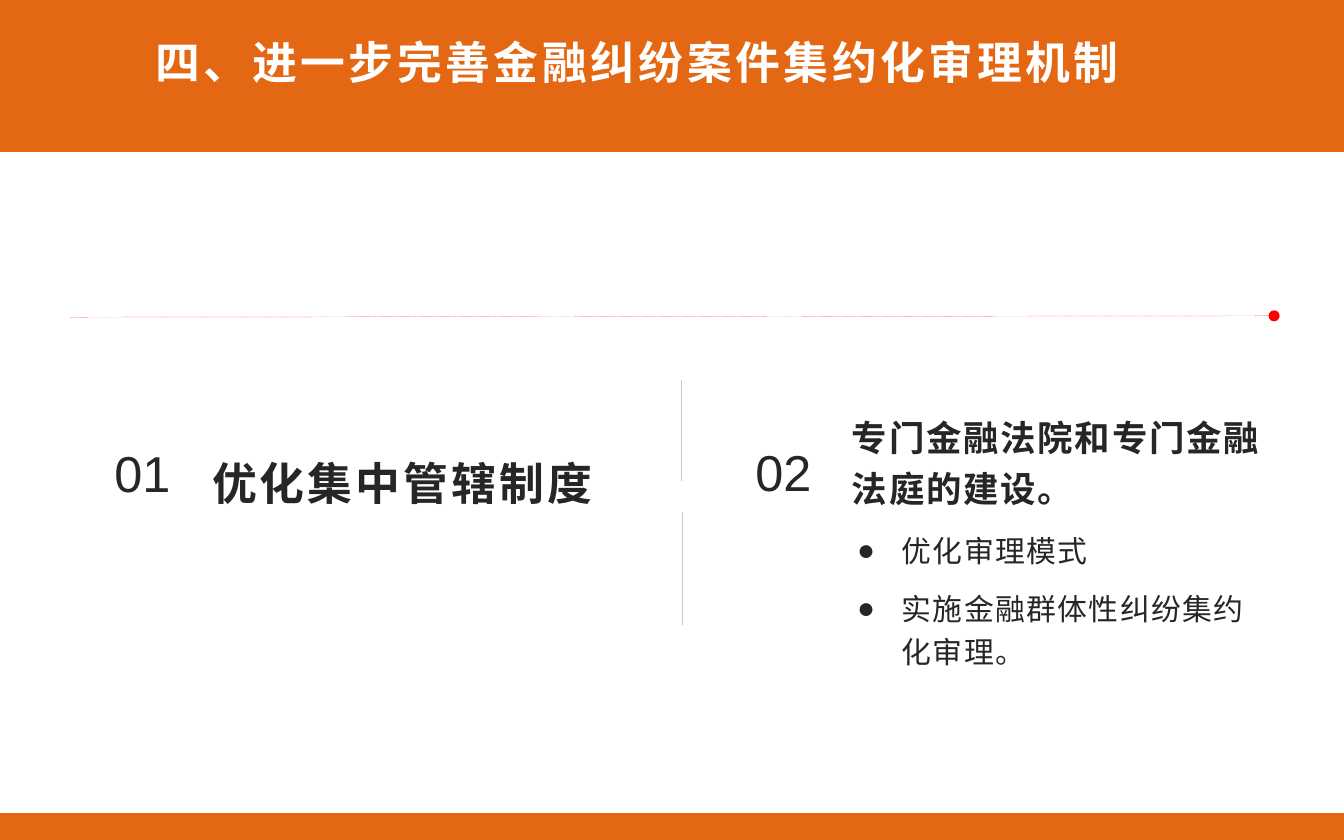
from dataclasses import dataclass

from lxml.etree import SubElement
from pptx import Presentation
from pptx.dml.color import RGBColor
from pptx.enum.dml import MSO_LINE
from pptx.enum.shapes import MSO_CONNECTOR, MSO_SHAPE
from pptx.enum.text import MSO_ANCHOR, PP_ALIGN
from pptx.oxml.ns import qn
from pptx.slide import Slide
from pptx.util import Inches, Pt

RECTANGLE = MSO_SHAPE.RECTANGLE
STRAIGHT = MSO_CONNECTOR.STRAIGHT
DASH = MSO_LINE.DASH
TOP, BOTTOM = MSO_ANCHOR.TOP, MSO_ANCHOR.BOTTOM
LEFT, CENTER = PP_ALIGN.LEFT, PP_ALIGN.CENTER
COLUMNS, ROWS = 100, 62.5
CELL = Inches(0.1)


@dataclass(frozen=True)
class Theme:
    """Colours, fonts and type sizes of the slide."""

    band: str = "E46813"
    ink: str = "262626"
    light: str = "FFFFFF"
    accent: str = "FF0000"
    divider: str = "B9CDE5"
    latin: str = "Arial"
    chinese: str = "Noto Sans CJK SC"
    number: int = 27
    heading: int = 24
    subheading: int = 19
    body: int = 16


@dataclass(frozen=True)
class Area:
    """A rectangle in grid columns and rows."""

    column: float
    row: float
    columns: float
    rows: float

    def lengths(self) -> tuple[int, ...]:
        """Return left, top, width and height as slide lengths."""
        return tuple(cells(value) for value in (self.column, self.row, self.columns, self.rows))


@dataclass(frozen=True)
class Topic:
    """A numbered topic with its heading and optional bullet points."""

    number: str
    number_area: Area
    heading: str
    heading_area: Area
    size: int
    tracking: float
    line_spacing: float = 1.0
    points: tuple[str, ...] = ()


THEME = Theme()
TITLE = "四、进一步完善金融纠纷案件集约化审理机制"
BANDS = (Area(0, 60.5, COLUMNS, 2), Area(0, -0.3, COLUMNS, 11.6))
DIVIDERS = ((50.7, 28.3, 35.8), (50.8, 38.1, 46.5))
POINTS_AREA = Area(62.8, 39.1, 32.2, 7.7)
TOPICS = (
    Topic("01", Area(5, 32.5, 11.2, 7), "优化集中管辖制度",
          Area(14.8, 31.9, 32.6, 6), THEME.heading, 1.7),
    Topic("02", Area(54.5, 32.4, 7.6, 7), "专门金融法院和专门金融法庭的建设。",
          Area(62.4, 31.9, 32.6, 6), THEME.subheading, 1, 1.2,
          ("优化审理模式", "实施金融群体性纠纷集约化审理。")),
)


def cells(count: float) -> int:
    """Convert a number of grid cells to a slide length."""
    return round(count * CELL)


def add_text(slide: Slide, area: Area, *lines: str, size: float, color: str = THEME.ink,
             font: str = THEME.latin, bold: bool = False, tracking: float = 0,
             align: PP_ALIGN = LEFT, anchor: MSO_ANCHOR = TOP,
             insets: tuple[float, float] = (0.1, 0), line_spacing: float = 1.0,
             space_after: float = 0, bullet: str = "") -> None:
    """Add a wrapped text box with one paragraph for each line."""
    frame = slide.shapes.add_textbox(*area.lengths()).text_frame
    frame.word_wrap = True
    frame.vertical_anchor = anchor
    frame.margin_left = frame.margin_right = Inches(insets[0])
    frame.margin_top = frame.margin_bottom = Inches(insets[1])
    for index, line in enumerate(lines):
        paragraph = frame.add_paragraph() if index else frame.paragraphs[0]
        paragraph.alignment = align
        paragraph.line_spacing = line_spacing
        paragraph.space_after = Pt(space_after)
        if bullet:
            properties = paragraph._p.get_or_add_pPr()
            properties.set("marL", str(Inches(0.33)))
            properties.set("indent", str(-Inches(0.33)))
            SubElement(properties, qn("a:buFont"), typeface=THEME.latin)
            SubElement(properties, qn("a:buChar"), char=bullet)
        run = paragraph.add_run()
        run.text = line
        run.font.name = font
        run.font.size = Pt(size)
        run.font.bold = bold
        run.font.color.rgb = RGBColor.from_string(color)
        run_properties = run.font._element
        run_properties.set("spc", str(round(tracking * 100)))
        SubElement(run_properties, qn("a:ea"), typeface=THEME.chinese)


def add_band(slide: Slide, area: Area) -> None:
    """Add a plain coloured band."""
    band = slide.shapes.add_shape(RECTANGLE, *area.lengths())
    band.shadow.inherit = False
    band.fill.solid()
    band.fill.fore_color.rgb = RGBColor.from_string(THEME.band)
    band.line.fill.background()


def add_line(slide: Slide, start: tuple[float, float], end: tuple[float, float],
             color: str, width: float, dash: MSO_LINE | None = None, head: str = "") -> None:
    """Add a straight line, with an optional dash and head shape."""
    points = (cells(value) for value in (*start, *end))
    connector = slide.shapes.add_connector(STRAIGHT, *points)
    connector.line.color.rgb = RGBColor.from_string(color)
    connector.line.width = Pt(width)
    if dash is not None:
        connector.line.dash_style = dash
    if head:
        SubElement(connector.line._get_or_add_ln(), qn("a:headEnd"), type=head)
    SubElement(connector._element.spPr, qn("a:effectLst"))


def add_topic(slide: Slide, topic: Topic) -> None:
    """Add the number, heading and bullet points of a topic."""
    add_text(slide, topic.number_area, topic.number, size=THEME.number,
             align=CENTER, insets=(0.07, 0.04))
    add_text(slide, topic.heading_area, topic.heading, size=topic.size, bold=True,
             tracking=topic.tracking, anchor=BOTTOM, line_spacing=topic.line_spacing)
    if topic.points:
        add_text(slide, POINTS_AREA, *topic.points, size=THEME.body, tracking=0.8,
                 line_spacing=1.2, space_after=8, bullet="●")


def main() -> None:
    """Build and save the presentation."""
    presentation = Presentation()
    presentation.slide_width = cells(COLUMNS)
    presentation.slide_height = cells(ROWS)
    slide = presentation.slides.add_slide(presentation.slide_layouts[6])
    for column, top, bottom in DIVIDERS:
        add_line(slide, (column, top), (column, bottom), THEME.divider, 0.75)
    for topic in TOPICS:
        add_topic(slide, topic)
    add_line(slide, (94.8, 23.5), (5.2, 23.6), THEME.accent, 0.1, dash=DASH, head="oval")
    for area in BANDS:
        add_band(slide, area)
    add_text(slide, Area(10.6, 2.1, 83.2, 7.2), TITLE, size=THEME.heading, color=THEME.light,
             font=THEME.chinese, bold=True, tracking=1.9, insets=(0.1, 0.05))
    presentation.save("out.pptx")


if __name__ == "__main__":
    main()
